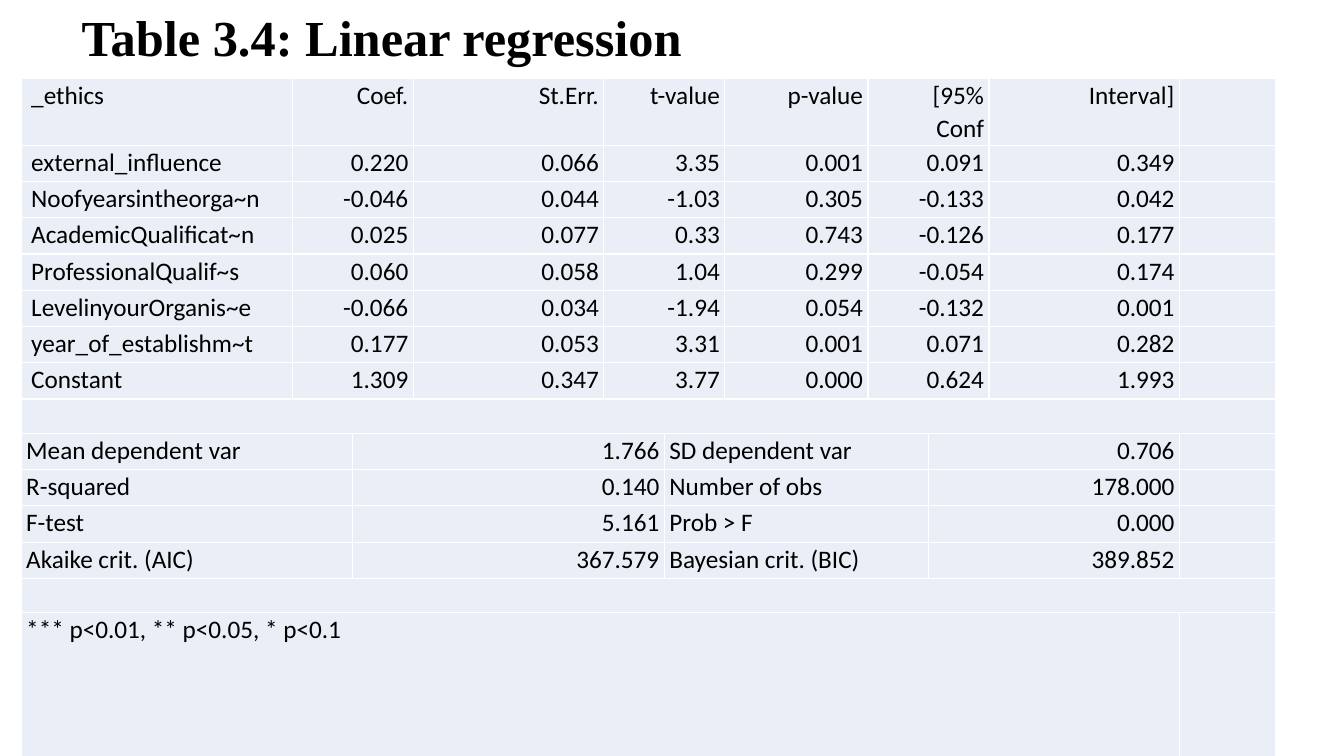
from lxml import etree
from pptx import Presentation
from pptx import util as u
from pptx.dml.color import RGBColor
from pptx.enum import text
from pptx.oxml.ns import qn

COLORS = {"text": "000000", "cell": "EAEFF7", "border": "FFFFFF"}
LEFT, RIGHT = text.PP_ALIGN.LEFT, text.PP_ALIGN.RIGHT

COL_WIDTHS = [2.69, 0.6, 0.6, 1.89, 0.6, 0.6, 1.42, 0.6, 0.6, 1.89, 0.95]
HEADER_H, ROW_H, GAP_H, NOTE_H = 0.66, 0.36, 0.34, 2.44

# How many grid columns each cell covers
COEF_SPANS = [1, 2, 1, 2, 1, 2, 1, 1]
FIT_SPANS = [2, 3, 3, 2, 1]
NOTE_SPANS = [10, 1]
GAP_SPANS = [11]

COEFFICIENTS = [
    ["_ethics", "Coef.", "St.Err.", "t-value", "p-value", "[95%\vConf", "Interval]"],
    ["external_influence", "0.220", "0.066", "3.35", "0.001", "0.091", "0.349"],
    ["Noofyearsintheorga~n", "-0.046", "0.044", "-1.03", "0.305", "-0.133", "0.042"],
    ["AcademicQualificat~n", "0.025", "0.077", "0.33", "0.743", "-0.126", "0.177"],
    ["ProfessionalQualif~s", "0.060", "0.058", "1.04", "0.299", "-0.054", "0.174"],
    ["LevelinyourOrganis~e", "-0.066", "0.034", "-1.94", "0.054", "-0.132", "0.001"],
    ["year_of_establishm~t", "0.177", "0.053", "3.31", "0.001", "0.071", "0.282"],
    ["Constant", "1.309", "0.347", "3.77", "0.000", "0.624", "1.993"],
]
FIT_STATS = [
    ["Mean dependent var", "1.766", "SD dependent var", "0.706"],
    ["R-squared", "0.140", "Number of obs", "178.000"],
    ["F-test", "5.161", "Prob > F", "0.000"],
    ["Akaike crit. (AIC)", "367.579", "Bayesian crit. (BIC)", "389.852"],
]
NOTE = ["*** p<0.01, ** p<0.05, * p<0.1"]


class Deck:
    """Holds the style and the current slide."""

    def __init__(self, prs):
        self.s = prs.slides.add_slide(prs.slide_layouts[5])

    def style(self, p, font, size, spacing, align=LEFT, bold=False):
        p.alignment, p.line_spacing = align, spacing
        p.font.name, p.font.size, p.font.bold = font, u.Pt(size), bold
        p.font.color.rgb = RGBColor.from_string(COLORS["text"])

    def title(self, words, x, y, w, h):
        sp = self.s.shapes.title
        sp.left, sp.top, sp.width, sp.height = map(u.Inches, (x, y, w, h))
        tf = sp.text_frame
        tf.text = words
        tf.word_wrap = True
        tf.auto_size = text.MSO_AUTO_SIZE.NONE
        tf.vertical_anchor = text.MSO_ANCHOR.MIDDLE
        self.style(tf.paragraphs[0], "Times New Roman", 36, 0.9, bold=True)

    def cell(self, cell, words="", align=LEFT, indent=0.05):
        cell.margin_left, cell.margin_right = u.Inches(indent), u.Inches(0.05)
        cell.margin_top = cell.margin_bottom = 0
        p = cell.text_frame.paragraphs[0]
        p.text = words
        self.style(p, "Calibri", 18, 1.07, align)
        # Borders come before the fill
        tcPr = cell._tc.get_or_add_tcPr()
        for side in ("a:lnL", "a:lnR", "a:lnT", "a:lnB"):
            ln = etree.SubElement(tcPr, qn(side), w=str(u.Pt(1)))
            fill = etree.SubElement(ln, qn("a:solidFill"))
            etree.SubElement(fill, qn("a:srgbClr"), val=COLORS["border"])
        cell.fill.solid()
        cell.fill.fore_color.rgb = RGBColor.from_string(COLORS["cell"])

    def table(self, rows, widths, x, y):
        """Each row is (height, spans, texts, alignments, first indent)."""
        height = sum(row[0] for row in rows)
        tb = self.s.shapes.add_table(
            len(rows), len(widths), u.Inches(x), u.Inches(y),
            u.Inches(sum(widths)), u.Inches(height)).table
        tb.first_row = tb.horz_banding = False
        for column, w in zip(tb.columns, widths):
            column.width = u.Inches(w)
        for r, (h, spans, words, aligns, indent) in enumerate(rows):
            tb.rows[r].height = u.Inches(h)
            contents = {}
            c = 0
            for i, span in enumerate(spans):
                if span > 1:
                    tb.cell(r, c).merge(tb.cell(r, c + span - 1))
                if i < len(words):
                    contents[c] = (words[i], aligns[i], 0.05 if i else indent)
                c += span
            for c in range(len(widths)):
                self.cell(tb.cell(r, c), *contents.get(c, ()))


def main():
    prs = Presentation()
    prs.slide_width, prs.slide_height = u.Inches(13.33), u.Inches(7.5)
    deck = Deck(prs)
    deck.title("Table 3.4: Linear regression", 0.71, 0, 11.5, 0.79)

    # Coefficients, then fit statistics, then the significance note
    gap = (GAP_H, GAP_SPANS, [], [], 0.05)
    rows = [(ROW_H if i else HEADER_H, COEF_SPANS, words, [LEFT] + [RIGHT] * 6, 0.1)
            for i, words in enumerate(COEFFICIENTS)]
    rows.append(gap)
    rows += [(ROW_H, FIT_SPANS, words, [LEFT, RIGHT] * 2, 0.05) for words in FIT_STATS]
    rows += [gap, (NOTE_H, NOTE_SPANS, NOTE, [LEFT], 0.05)]
    deck.table(rows, COL_WIDTHS, 0.21, 0.78)

    prs.save("out.pptx")


if __name__ == "__main__":
    main()
